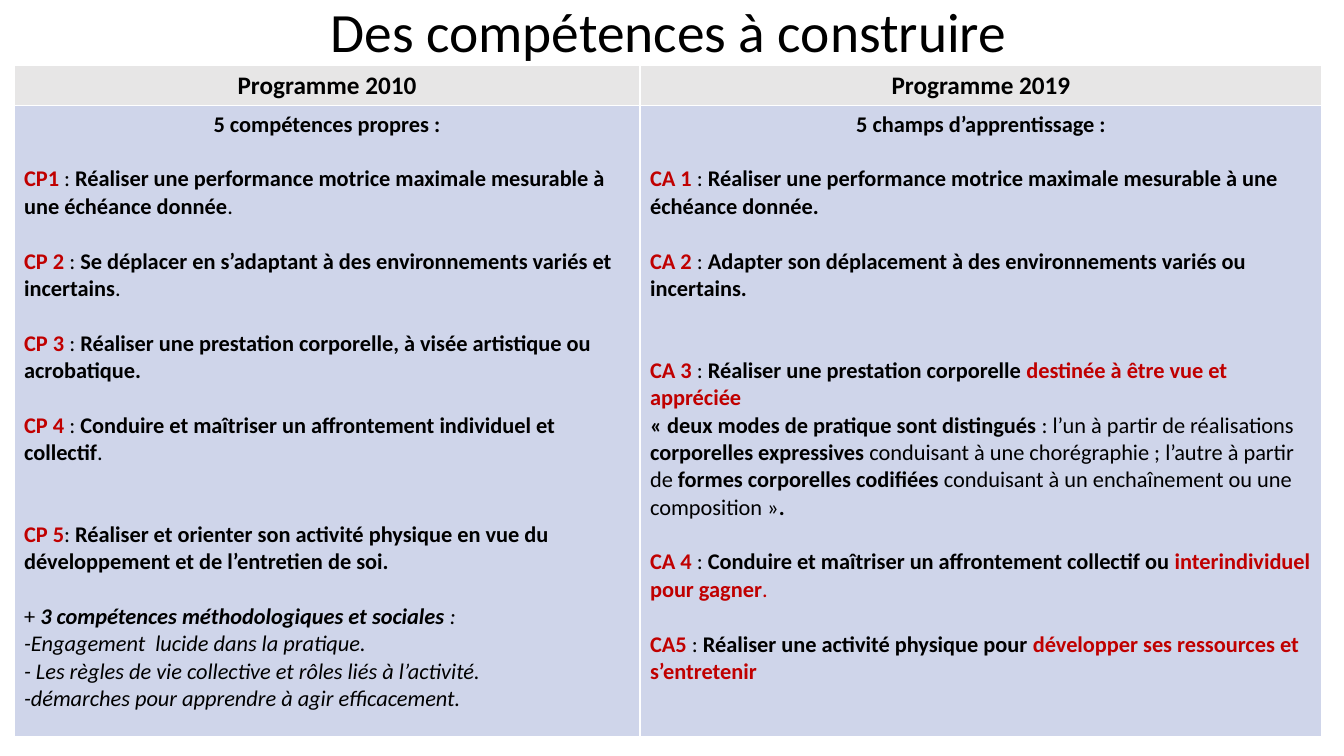
"""Build a slide comparing the competences of the 2010 and 2019 programmes."""
from pptx import Presentation
from pptx import util as u
from pptx.dml.color import RGBColor
from pptx.enum import text

BLACK = RGBColor(0x00, 0x00, 0x00)
RED = RGBColor(0xC0, 0x00, 0x00)
GREY = RGBColor(0xE7, 0xE6, 0xE6)
LAVENDER = RGBColor(0xCF, 0xD5, 0xEA)
FONT = "Calibri"
PX = u.Inches(7.5) / 756
LINE = 19.5

TITLE = "Des compétences à construire"
TITLE_BOX = (89, 21, 1159, 28)
TABLE_LEFT, TABLE_TOP = 14, 65
COLUMNS = (626, 682)
ROWS = (39, 631)

# Each paragraph: blank lines above, then (text, style) runs; b bold, i italic, r red.
PROGRAMMES = [
    ("Programme 2010", "5 compétences propres :", [
        (1, [("CP1", "br"), (" : ", ""),
             ("Réaliser une performance motrice maximale mesurable à une échéance donnée", "b"),
             (".", "")]),
        (1, [("CP 2 ", "br"), (": ", ""),
             ("Se déplacer en s’adaptant à des environnements variés et incertains", "b"),
             (".", "")]),
        (1, [("CP 3 ", "br"), (": ", ""),
             ("Réaliser une prestation corporelle, à visée artistique ou acrobatique.", "b")]),
        (1, [("CP 4 ", "br"), (": ", ""),
             ("Conduire et maîtriser un affrontement individuel et collectif", "b"),
             (".", "")]),
        (2, [("CP 5", "br"), (": ", ""),
             ("Réaliser et orienter son activité physique en vue du développement "
              "et de l’entretien de soi.", "b")]),
        (1, [("+ ", ""), ("3 compétences méthodologiques et sociales", "bi"), (" :", "i")]),
        (0, [("-Engagement  lucide dans la pratique.", "i")]),
        (0, [("- Les règles de vie collective et rôles liés à l’activité.", "i")]),
        (0, [("-démarches pour apprendre à agir efficacement.", "i")]),
    ]),
    ("Programme 2019", "5 champs d’apprentissage :", [
        (1, [("CA 1 ", "br"), (": ", ""),
             ("Réaliser une performance motrice maximale mesurable à une échéance donnée.", "b")]),
        (1, [("CA 2 ", "br"), (": ", ""),
             ("Adapter son déplacement à des environnements variés ou incertains.", "b")]),
        (2, [("CA 3 ", "br"), (": ", ""), ("Réaliser une prestation corporelle ", "b"),
             ("destinée à être vue et appréciée", "br")]),
        (0, [("« deux modes de pratique sont distingués ", "b"),
             (": l’un à partir de réalisations", ""), (" corporelles expressives ", "b"),
             ("conduisant à une chorégraphie ; l’autre à partir de ", ""),
             ("formes corporelles codifiées ", "b"),
             ("conduisant à un enchaînement ou une composition »", ""), (".", "b")]),
        (1, [("CA 4 ", "br"), (": ", ""),
             ("Conduire et maîtriser un affrontement collectif ou ", "b"),
             ("interindividuel pour gagner", "br"), (".", "r")]),
        (1, [("CA5 ", "br"), (": ", ""), ("Réaliser une activité physique pour ", "b"),
             ("développer ses ressources et s’entretenir", "br")]),
    ]),
]


def px(length):
    """Turn px into EMU."""
    return u.Emu(round(length * PX))


def write(paragraph, runs, size, gap=0, centred=False):
    """Fill a paragraph with styled runs."""
    paragraph.font.name, paragraph.font.size = FONT, u.Pt(size)
    paragraph.space_before = u.Pt(gap * LINE)
    paragraph.alignment = text.PP_ALIGN.CENTER if centred else text.PP_ALIGN.LEFT
    for words, style in runs:
        run = paragraph.add_run()
        run.text = words
        run.font.bold, run.font.italic = "b" in style, "i" in style
        run.font.color.rgb = RED if "r" in style else BLACK


def fill(cell, colour):
    """Give a cell a plain fill."""
    cell.fill.solid()
    cell.fill.fore_color.rgb = colour


def main():
    """Lay out the title and the two programmes."""
    deck = Presentation()
    deck.slide_width, deck.slide_height = px(1344), px(756)
    slide = deck.slides.add_slide(deck.slide_layouts[5])

    title = slide.shapes.title
    title.left, title.top, title.width, title.height = map(px, TITLE_BOX)
    title.text_frame.auto_size = text.MSO_AUTO_SIZE.NONE
    title.text_frame.vertical_anchor = text.MSO_ANCHOR.MIDDLE
    heading = title.text_frame.paragraphs[0]
    write(heading, [(TITLE, "")], 39.6, centred=True)
    heading.line_spacing = 0.9

    programmes = slide.shapes.add_table(
        len(ROWS), len(COLUMNS), px(TABLE_LEFT), px(TABLE_TOP),
        px(sum(COLUMNS)), px(sum(ROWS))).table
    for row, height in zip(programmes.rows, ROWS):
        row.height = px(height)
    for index, (name, subject, competences) in enumerate(PROGRAMMES):
        programmes.columns[index].width = px(COLUMNS[index])
        header, body = programmes.cell(0, index), programmes.cell(1, index)
        fill(header, GREY)
        fill(body, LAVENDER)
        write(header.text_frame.paragraphs[0], [(name, "b")], 18, centred=True)
        write(body.text_frame.paragraphs[0], [(subject, "b")], 16, centred=True)
        for gap, runs in competences:
            write(body.text_frame.add_paragraph(), runs, 16, gap)
    deck.save("out.pptx")


if __name__ == "__main__":
    main()
